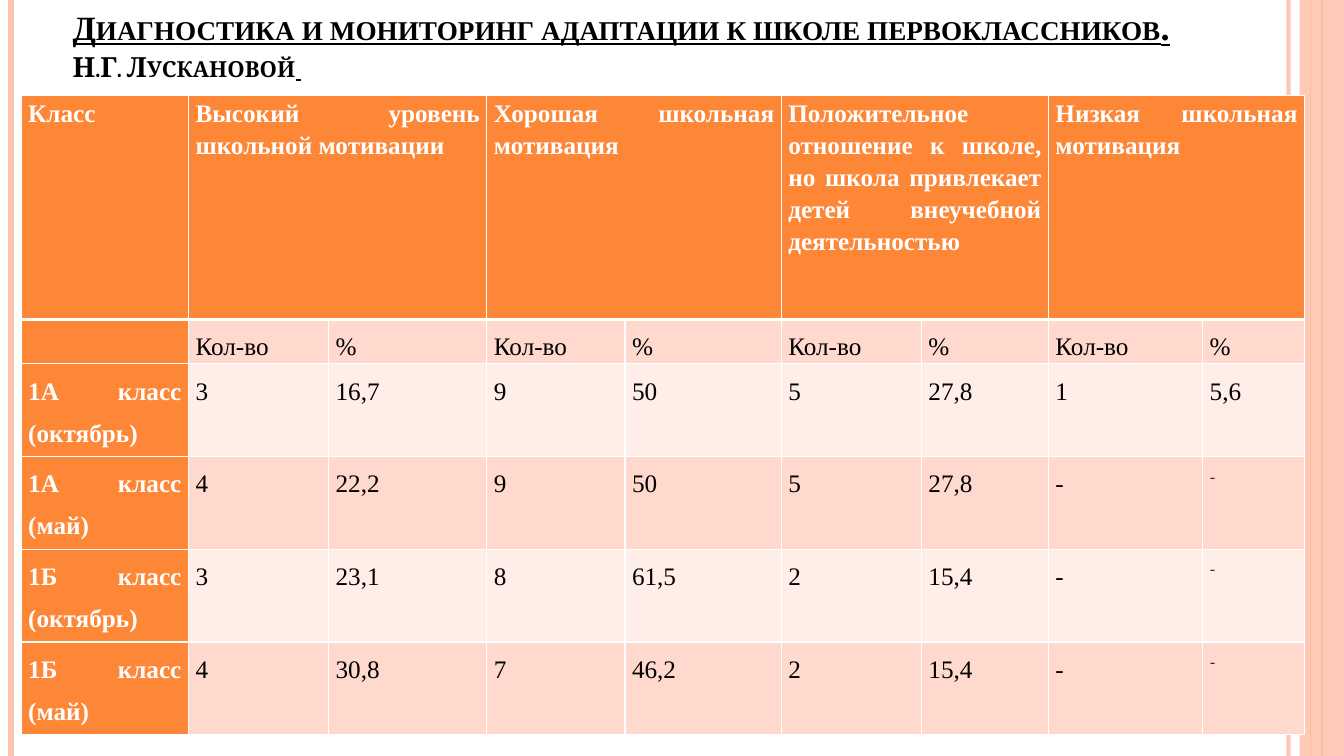
"""Builds a slide with a table of school motivation levels in first-grade classes."""
from lxml.etree import SubElement
from pptx import Presentation
from pptx.dml.color import RGBColor
from pptx.enum.shapes import MSO_CONNECTOR, MSO_SHAPE
from pptx.enum.text import MSO_ANCHOR, MSO_AUTO_SIZE, PP_ALIGN
from pptx.oxml.ns import qn
from pptx.util import Inches, Pt

COLORS = {"orange": "FE8637", "peach": "FEC3AE", "band": "FFD9CE",
          "light": "FFEDE8", "white": "FFFFFF", "black": "000000"}
SERIF, HEADING = "Times New Roman", "Cambria"

TITLE_LINES = [
    [("Диагностика и мониторинг адаптации к школе первоклассников",
      dict(size=24.3, underline=True)),
     (".", dict(size=32.4, underline=True))],
    [("Н.Г. Лускановой", dict(size=19.8, font=HEADING)),
     (" ", dict(size=19.8, underline=True))],
]
LEVELS = ["Высокий уровень школьной мотивации", "Хорошая школьная мотивация",
          "Положительное отношение к школе, но школа привлекает детей "
          "внеучебной деятельностью", "Низкая школьная мотивация"]
ROWS = [
    ["Класс"] + [text for level in LEVELS for text in (level, "")],
    [""] + ["Кол-во", "%"] * len(LEVELS),
    ["1А класс (октябрь)", "3", "16,7", "9", "50", "5", "27,8", "1", "5,6"],
    ["1А класс (май)", "4", "22,2", "9", "50", "5", "27,8", "-", "-"],
    ["1Б класс (октябрь)", "3", "23,1", "8", "61,5", "2", "15,4", "-", "-"],
    ["1Б класс (май)", "4", "30,8", "7", "46,2", "2", "15,4", "-", "-"],
]
COLUMN_WIDTHS = [1.66, 1.39, 1.57, 1.37, 1.55, 1.39, 1.26, 1.53, 1.01]
ROW_HEIGHTS = [2.22, 0.44] + [0.92] * 4
TABLE_LEFT, TABLE_TOP = 0.21, 0.95
SLIDE_WIDTH, SLIDE_HEIGHT = 13.33, 7.5
STRIPE = dict(left=12.89, width=0.44, color="peach", opacity=87)
RULES = [(12.78, "peach", 3, 93), (0.11, "peach", 4.5, 100),
         (13.11, "orange", 1.5, 100), (13, "orange", 0.75, 100)]


def rgb(name):
    return RGBColor.from_string(COLORS[name])


def add_text(paragraph, text, size=18, font=SERIF, color="black", bold=False,
             underline=False, small_caps=False):
    run = paragraph.add_run()
    run.text = text
    run.font.size, run.font.name = Pt(size), font
    run.font.bold, run.font.underline = bold, underline
    run.font.color.rgb = rgb(color)
    if small_caps:
        run.font._element.set("cap", "small")


def set_opacity(element, percent):
    for color in element.iter(qn("a:srgbClr")):
        SubElement(color, qn("a:alpha"), val=str(percent * 1000))


def add_border(cell, side, points):
    properties = cell._tc.get_or_add_tcPr()
    line = SubElement(properties, qn(f"a:ln{side}"), w=str(Pt(points)))
    fill = SubElement(line, qn("a:solidFill"))
    SubElement(fill, qn("a:srgbClr"), val=COLORS["white"])


def add_decor(slide):
    for x, color, weight, opacity in RULES:
        rule = slide.shapes.add_connector(
            MSO_CONNECTOR.STRAIGHT, Inches(x), 0, Inches(x), Inches(SLIDE_HEIGHT))
        rule.line.color.rgb, rule.line.width = rgb(color), Pt(weight)
        set_opacity(rule.line._ln, opacity)
        SubElement(rule._element.spPr, qn("a:effectLst"))
    stripe = slide.shapes.add_shape(
        MSO_SHAPE.RECTANGLE, Inches(STRIPE["left"]), 0,
        Inches(STRIPE["width"]), Inches(SLIDE_HEIGHT))
    stripe.shadow.inherit = False
    stripe.fill.solid()
    stripe.fill.fore_color.rgb = rgb(STRIPE["color"])
    set_opacity(stripe._element.spPr, STRIPE["opacity"])
    stripe.line.fill.background()


def add_title(slide):
    title = slide.shapes.title
    title.left, title.top = Inches(0.62), Inches(0.15)
    title.width, title.height = Inches(12), Inches(1.15)
    frame = title.text_frame
    frame.word_wrap, frame.auto_size = True, MSO_AUTO_SIZE.NONE
    frame.vertical_anchor = MSO_ANCHOR.BOTTOM
    frame.margin_bottom = Inches(0.48)
    paragraph = frame.paragraphs[0]
    paragraph.alignment = PP_ALIGN.LEFT
    for number, line in enumerate(TITLE_LINES):
        if number:
            paragraph.add_line_break()
        for text, style in line:
            add_text(paragraph, text, bold=True, small_caps=True, **style)


def fill_cell(cell, text, row, column):
    heading = row == 0 or column == 0
    fill = "orange" if heading else "band" if row % 2 else "light"
    cell.fill.solid()
    cell.margin_left = cell.margin_right = Inches(0.07)
    cell.margin_top = cell.margin_bottom = 0
    paragraph = cell.text_frame.paragraphs[0]
    paragraph.alignment = PP_ALIGN.JUSTIFY
    paragraph.line_spacing = 1.5 if row else 1.15
    paragraph.space_after = Pt(10 if row else 0)
    small_dash = text == "-" and column == len(COLUMN_WIDTHS) - 1
    if text:
        add_text(paragraph, text, size=13 if small_dash else 18,
                 font=HEADING if small_dash else SERIF,
                 color="white" if heading else "black", bold=heading)
    cell.fill.background()
    for side in "LRTB":
        thick = (row, side) in [(0, "B"), (1, "T")]
        add_border(cell, side, 3 if thick else 1)
    properties = cell._tc.tcPr
    properties.remove(properties.find(qn("a:noFill")))
    cell.fill.solid()
    cell.fill.fore_color.rgb = rgb(fill)


def add_levels_table(slide):
    table = slide.shapes.add_table(
        len(ROWS), len(COLUMN_WIDTHS), Inches(TABLE_LEFT), Inches(TABLE_TOP),
        Inches(sum(COLUMN_WIDTHS)), Inches(sum(ROW_HEIGHTS))).table
    table.first_col = True
    for column, width in zip(table.columns, COLUMN_WIDTHS):
        column.width = Inches(width)
    for row, height in zip(table.rows, ROW_HEIGHTS):
        row.height = Inches(height)
    for row, texts in enumerate(ROWS):
        for column, text in enumerate(texts):
            fill_cell(table.cell(row, column), text, row, column)
    for column in range(1, len(COLUMN_WIDTHS), 2):
        table.cell(0, column).merge(table.cell(0, column + 1))


def main():
    deck = Presentation()
    deck.slide_width, deck.slide_height = Inches(SLIDE_WIDTH), Inches(SLIDE_HEIGHT)
    slide = deck.slides.add_slide(deck.slide_layouts[5])
    add_decor(slide)
    add_title(slide)
    add_levels_table(slide)
    deck.save("out.pptx")


if __name__ == "__main__":
    main()
